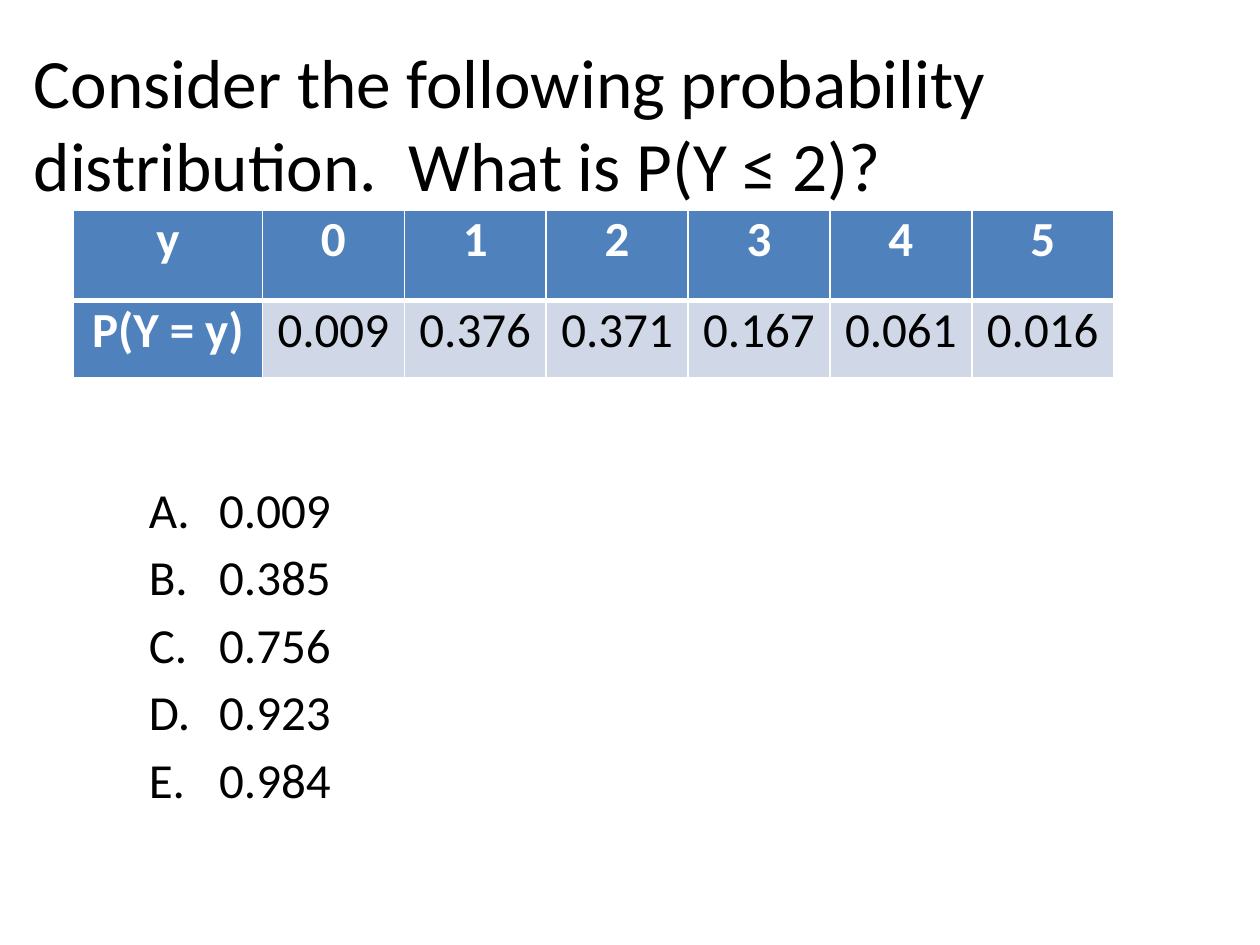
from pptx import Presentation
from pptx.dml.color import RGBColor
from pptx.enum.text import MSO_ANCHOR as Anchor, PP_ALIGN as Align
from pptx.oxml.ns import qn
from pptx.util import Cm, Pt
from lxml.etree import SubElement

BLACK, WHITE, BLUE, PALE = "000000", "FFFFFF", "4F81BD", "D0D8E8"

QUESTION = "Consider the following probability distribution.  What is P(Y ≤ 2)?"
ANSWERS = ["0.009", "0.385", "0.756", "0.923", "0.984"]
DISTRIBUTION = [
    ["y", "0", "1", "2", "3", "4", "5"],
    ["P(Y = y)", "0.009", "0.376", "0.371", "0.167", "0.061", "0.016"],
]


def color(value):
    return RGBColor.from_string(value)


def set_format(target, values):
    for name, value in values.items():
        setattr(target, name, value)


def write(para, text, size, fill=BLACK, bold=False):
    span = para.add_run()
    span.text = text
    set_format(span.font, {"name": "Calibri", "size": Pt(size), "bold": bold})
    span.font.color.rgb = color(fill)


def add_text_box(page, left, top, width, height, margin_top=0.13):
    box = page.shapes.add_textbox(Cm(left), Cm(top), Cm(width), Cm(height))
    set_format(box.text_frame, {"word_wrap": True, "vertical_anchor": Anchor.TOP,
                                "margin_top": Cm(margin_top)})
    return box.text_frame


def number_paragraph(para, indent, hanging):
    """Give the paragraph an automatic A., B., C. number."""
    props = para._p.get_or_add_pPr()
    props.set("marL", str(Cm(indent)))
    props.set("indent", str(-Cm(hanging)))
    SubElement(props, qn("a:buFont"), typeface="+mj-lt")
    SubElement(props, qn("a:buAutoNum"), type="alphaUcPeriod")


def add_answers(page, answers):
    frame = add_text_box(page, 1.48, 9.53, 9.53, 8.26)
    for index, answer in enumerate(answers):
        para = frame.add_paragraph() if index else frame.paragraphs[0]
        para.level = 1
        para.space_before = Pt(5)
        number_paragraph(para, 2.69, 1.42)
        write(para, answer, 28)


def set_borders(cell, widths):
    """Draw white borders; they must precede the fill in the cell properties."""
    props = cell._tc.get_or_add_tcPr()
    for index, (side, width) in enumerate(widths.items()):
        line = SubElement(props, qn(f"a:ln{side}"), w=str(Pt(width)))
        fill = SubElement(line, qn("a:solidFill"))
        SubElement(fill, qn("a:srgbClr"), val=WHITE)
        props.insert(index, line)


def style_cell(cell, text, is_header, widths):
    set_format(cell, {"margin_left": Cm(0.18), "margin_right": Cm(0.18),
                      "margin_top": 0, "margin_bottom": 0})
    set_borders(cell, widths)
    cell.fill.solid()
    cell.fill.fore_color.rgb = color(BLUE if is_header else PALE)
    para = cell.text_frame.paragraphs[0]
    para.alignment = Align.CENTER
    write(para, text, 28, WHITE if is_header else BLACK, is_header)


def add_distribution(page, rows):
    column_widths = [3.81] + [2.86] * (len(rows[0]) - 1)
    row_heights = [1.82, 1.56]
    table = page.shapes.add_table(
        len(rows), len(rows[0]), Cm(1.48), Cm(4.24),
        Cm(sum(column_widths)), Cm(sum(row_heights))).table
    for column, width in zip(table.columns, column_widths):
        column.width = Cm(width)
    for row, height in zip(table.rows, row_heights):
        row.height = Cm(height)
    # A thick rule separates the header row from the probabilities
    for r, values in enumerate(rows):
        widths = {"L": 1, "R": 1, "T": 3 if r else 1, "B": 1 if r else 3}
        for c, text in enumerate(values):
            style_cell(table.cell(r, c), text, r == 0 or c == 0, widths)


def main():
    deck = Presentation()
    set_format(deck, {"slide_width": Cm(25.4), "slide_height": Cm(19.05)})
    page = deck.slides.add_slide(deck.slide_layouts[6])

    # Question
    frame = add_text_box(page, 0.43, 0.43, 21.59, 5.72, margin_top=0.36)
    write(frame.paragraphs[0], QUESTION, 39.6)

    # Answer choices and probability table
    add_answers(page, ANSWERS)
    add_distribution(page, DISTRIBUTION)

    deck.save("out.pptx")


if __name__ == "__main__":
    main()
